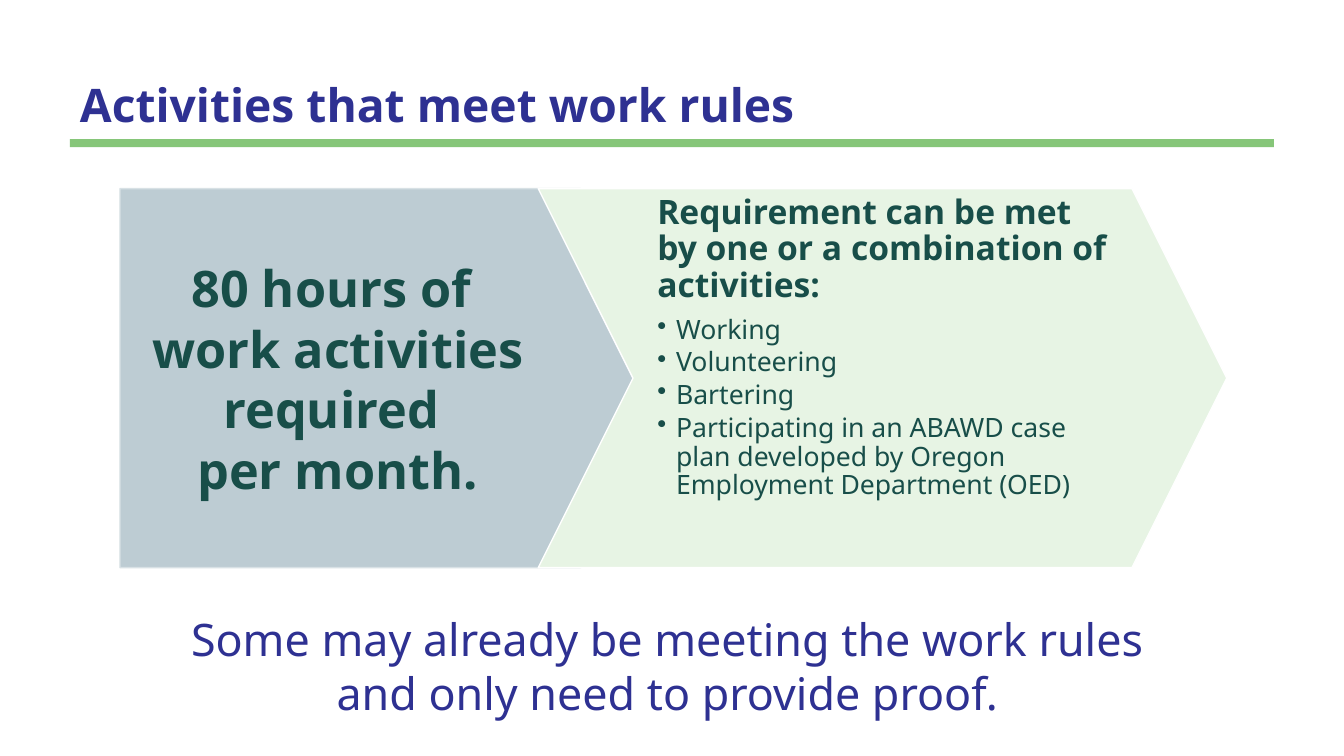
import pptx
import pptx.util
import pptx.dml.color
import pptx.enum.shapes
import pptx.enum.text
import pptx.oxml

Pt = pptx.util.Pt
SHAPES = pptx.enum.shapes.MSO_SHAPE
ANCHOR = pptx.enum.text.MSO_ANCHOR
ALIGN = pptx.enum.text.PP_ALIGN

NAVY = "2E3192"
TEAL = "184E49"
TIP = 0.25


def color(hex_code):
    return pptx.dml.color.RGBColor.from_string(hex_code)


def format_text(paragraph, size, hex_code, bold=False):
    for run in paragraph.runs:
        run.font.name = "Noto Sans"
        run.font.size = Pt(size)
        run.font.bold = bold
        run.font.color.rgb = color(hex_code)


def add_panel(slide, preset, box, fill, outline=None):
    panel = slide.shapes.add_shape(preset, *map(Pt, box))
    panel.shadow.inherit = False
    panel.fill.solid()
    panel.fill.fore_color.rgb = color(fill)
    if outline:
        panel.line.color.rgb = color(outline)
        panel.line.width = Pt(1)
        panel.adjustments[0] = TIP
    else:
        panel.line.fill.background()


def add_text(slide, box, lines, insets=(7.2, 3.6, 7.2, 3.6), anchor=ANCHOR.TOP):
    frame = slide.shapes.add_textbox(*map(Pt, box)).text_frame
    frame.word_wrap = True
    frame.vertical_anchor = anchor
    frame.margin_left, frame.margin_top, frame.margin_right, frame.margin_bottom = map(Pt, insets)
    frame.text = "\n".join(lines)
    return frame.paragraphs


def add_heading(slide, box):
    left, top, width, height = box
    title = slide.shapes.title
    title.left, title.top, title.width, title.height = map(Pt, box)
    frame = title.text_frame
    frame.text = "Activities that meet work rules"
    frame.word_wrap = True
    frame.auto_size = pptx.enum.text.MSO_AUTO_SIZE.NONE
    frame.vertical_anchor = ANCHOR.BOTTOM
    heading = frame.paragraphs[0]
    heading.alignment = ALIGN.LEFT
    heading.line_spacing = 0.9
    format_text(heading, 33, NAVY, True)
    add_panel(slide, SHAPES.RECTANGLE, (left, top + height + 0.7, width, 5.8), "86C679")


def add_hours(slide, box):
    left, top, width, height = box
    add_panel(slide, SHAPES.PENTAGON, box, "BDCCD3", "D8E1E5")
    lines = ["80 hours of ", "work activities required ", "per month."]
    text_box = (left, top, width - TIP * height / 2, height)
    for paragraph in add_text(slide, text_box, lines, (17.3, 7.2, 69.1, 7.2), ANCHOR.MIDDLE):
        paragraph.alignment = ALIGN.CENTER
        format_text(paragraph, 36, TEAL, True)


def add_bullet(paragraph):
    properties = paragraph._p.get_or_add_pPr()
    properties.set("marL", str(Pt(13.5)))
    properties.set("indent", str(-Pt(13.5)))
    bullet = pptx.oxml.parse_xml(
        '<a:buChar xmlns:a="http://schemas.openxmlformats.org/drawingml/2006/main" char="•"/>')
    properties.append(bullet)


def add_activities(slide, box):
    left, top, width, height = box
    add_panel(slide, SHAPES.CHEVRON, box, "E7F4E4", "FFFFFF")
    lines = [
        "Requirement can be met by one or a combination of activities:",
        "Working",
        "Volunteering",
        "Bartering",
        "Participating in an ABAWD case plan developed by Oregon Employment Department (OED)",
    ]
    notch = TIP * height
    text_box = (left + notch, top, width - 2 * notch, height)
    requirement, *activities = add_text(slide, text_box, lines, (17.3, 5, 17.3, 5))
    requirement.line_spacing = 0.9
    requirement.space_after = Pt(8.4)
    format_text(requirement, 24, TEAL, True)
    for activity in activities:
        add_bullet(activity)
        activity.level = 1
        activity.line_spacing = 0.9
        activity.space_after = Pt(2.85)
        format_text(activity, 19, TEAL)


def add_closing(slide, box):
    lines = ["Some may already be meeting the work rules ", "and only need to provide proof. "]
    for paragraph in add_text(slide, box, lines):
        paragraph.alignment = ALIGN.CENTER
        format_text(paragraph, 32, NAVY)


def main():
    deck = pptx.Presentation()
    deck.slide_width, deck.slide_height = Pt(960), Pt(540)
    slide = deck.slides.add_slide(deck.slide_layouts[5])
    add_heading(slide, (49.9, 33.8, 860, 64.8))
    add_hours(slide, (85.7, 134.8, 396.7, 270.7))
    add_activities(slide, (384.5, 134.8, 491.8, 270.7))
    add_closing(slide, (85.7, 433.4, 790.6, 85))
    deck.save("out.pptx")


if __name__ == "__main__":
    main()
